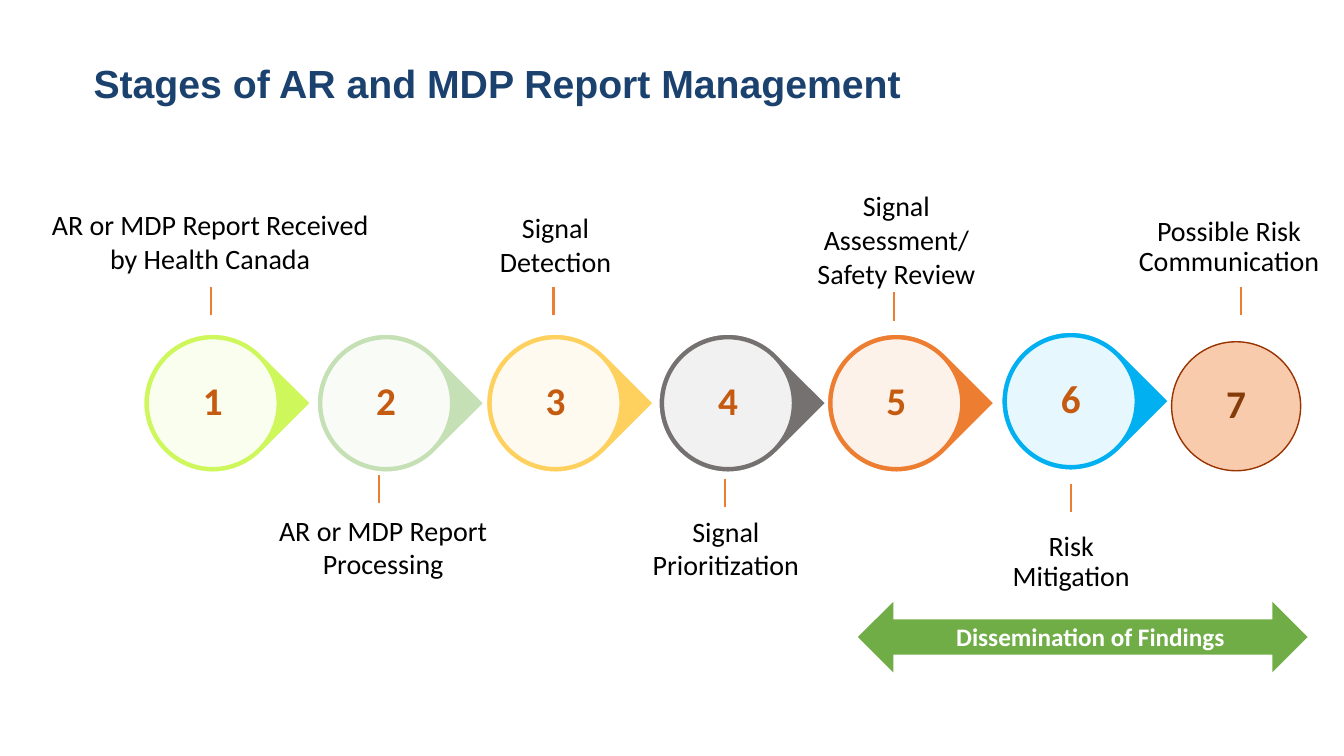
"""Build the slide on the seven stages of AR and MDP report management."""
from dataclasses import dataclass

from lxml import etree
from pptx import Presentation
from pptx.dml.color import RGBColor
from pptx.enum.shapes import MSO_CONNECTOR, MSO_SHAPE
from pptx.enum.text import MSO_ANCHOR, PP_ALIGN
from pptx.oxml.ns import qn
from pptx.util import Inches, Pt

TEARDROP, OVAL = MSO_SHAPE.TEAR, MSO_SHAPE.OVAL
ARROW, STRAIGHT = MSO_SHAPE.LEFT_RIGHT_ARROW, MSO_CONNECTOR.STRAIGHT
TOP, MIDDLE = MSO_ANCHOR.TOP, MSO_ANCHOR.MIDDLE
LEFT, CENTER = PP_ALIGN.LEFT, PP_ALIGN.CENTER

CIRCLE, DROP, TICK = 1.28, 1.37, 0.28
RIM = (DROP - CIRCLE) / 2


@dataclass
class Label:
    text: str
    left: float
    top: float
    width: float
    height: float
    size: int = 20
    color: str = "000000"
    font: str = "Calibri"
    bold: bool = False
    align: PP_ALIGN = CENTER
    anchor: MSO_ANCHOR = MIDDLE
    spacing: float = 1.0
    inset: float = 0.1
    wrap: bool = True


@dataclass
class Stage:
    left: float
    top: float
    color: str
    tick_x: float
    tick_y: float
    inset: float = 0.26


STAGES = [
    Stage(1.47, 3.36, "CEF75C", 2.09, 2.85, 0.22),
    Stage(3.19, 3.36, "C5E0B4", 3.76, 4.71, 0.22),
    Stage(4.87, 3.36, "FED15E", 5.49, 2.85, 0.22),
    Stage(6.58, 3.36, "767171", 7.19, 4.75),
    Stage(8.25, 3.36, "ED7D31", 8.87, 2.9),
    Stage(9.98, 3.34, "00B0F0", 10.62, 4.8),
]
FINAL = Stage(11.62, 3.39, "993300", 12.31, 2.85)

LABELS = [
    Label("AR or MDP Report Received by Health Canada", 0.32, 2.01, 3.53, 0.77),
    Label("AR or MDP Report Processing", 2.09, 5.04, 3.42, 0.77),
    Label("Signal Detection", 4.66, 2.04, 1.7, 0.77),
    Label("Signal Prioritization", 6.35, 5.05, 1.7, 0.77),
    Label("Signal Assessment/\nSafety Review", 7.8, 1.82, 2.18, 1.11),
    Label("Risk\vMitigation", 9.16, 5.26, 2.93, 0.64, spacing=0.9, inset=0),
    Label("Possible Risk\vCommunication", 10.99, 2.07, 2.4, 0.77, spacing=0.9, inset=0),
    Label("Dissemination of Findings", 9.37, 6.15, 2.89, 0.37, 18, "FFFFFF",
          bold=True, anchor=TOP, spacing=0.9, wrap=False),
    Label("Stages of AR and MDP Report Management", 0.83, 0.59, 11.5, 1.45, 28,
          "1B416F", "Arial", True, LEFT, TOP, 0.9),
]


def rgb(color: str) -> RGBColor:
    return RGBColor.from_string(color)


def write(sp, label: Label) -> None:
    tf = sp.text_frame
    inset = Inches(label.inset)
    side = inset / 2 if label.inset == 0.1 else inset
    frame = {"word_wrap": label.wrap, "vertical_anchor": label.anchor,
             "margin_left": inset, "margin_right": inset,
             "margin_top": int(side), "margin_bottom": int(side)}
    for name, value in frame.items():
        setattr(tf, name, value)
    tf.text = label.text
    for p in tf.paragraphs:
        p.alignment, p.line_spacing = label.align, label.spacing
        for r in p.runs:
            font = {"name": label.font, "size": Pt(label.size), "bold": label.bold}
            for name, value in font.items():
                setattr(r.font, name, value)
            r.font.color.rgb = rgb(label.color)


def add_label(s, label: Label) -> None:
    box = (label.left, label.top, label.width, label.height)
    write(s.shapes.add_textbox(*map(Inches, box)), label)


def add_filled(shapes, kind: MSO_SHAPE, box: tuple, fill: str, line: str = ""):
    sp = shapes.add_shape(kind, *map(Inches, box))
    sp.shadow.inherit = False
    sp.fill.solid()
    sp.fill.fore_color.rgb = rgb(fill)
    if line:
        sp.line.color.rgb = rgb(line)
        sp.line.width = Pt(1)
    else:
        sp.line.fill.background()
    return sp


def add_circle(shapes, stage: Stage, number: int, fill: str, color: str):
    box = (stage.left, stage.top, CIRCLE, CIRCLE)
    sp = add_filled(shapes, OVAL, box, fill, stage.color)
    write(sp, Label(str(number), *box, size=28, color=color, bold=True,
                    spacing=0.9, inset=stage.inset))
    return sp


def add_stage(s, stage: Stage, number: int) -> None:
    group = s.shapes.add_group_shape()
    box = (stage.left - RIM, stage.top - RIM, DROP, DROP)
    add_filled(group.shapes, TEARDROP, box, stage.color, "FFFFFF").rotation = 45
    sp = add_circle(group.shapes, stage, number, "FFFFFF", "C55A11")
    white = sp.fill._xPr.find(qn("a:solidFill"))[0]
    etree.SubElement(white, qn("a:alpha"), val="90000")


def add_tick(s, stage: Stage) -> None:
    ends = (stage.tick_x, stage.tick_y + TICK, stage.tick_x, stage.tick_y)
    line = s.shapes.add_connector(STRAIGHT, *map(Inches, ends))
    line.line.color.rgb = rgb("ED7D31")
    line.line.width = Pt(1.5)
    etree.SubElement(line._element.spPr, qn("a:effectLst"))


def main() -> None:
    prs = Presentation()
    prs.slide_width, prs.slide_height = Inches(13.33), Inches(7.5)
    s = prs.slides.add_slide(prs.slide_layouts[6])
    add_circle(s.shapes, FINAL, len(STAGES) + 1, "F8CBAD", "843C0B")
    for number, stage in enumerate(STAGES, 1):
        add_stage(s, stage, number)
    for stage in [*STAGES, FINAL]:
        add_tick(s, stage)
    add_filled(s.shapes, ARROW, (8.51, 5.97, 4.46, 0.7), "70AD47")
    for label in LABELS:
        add_label(s, label)
    prs.save("out.pptx")


if __name__ == "__main__":
    main()
